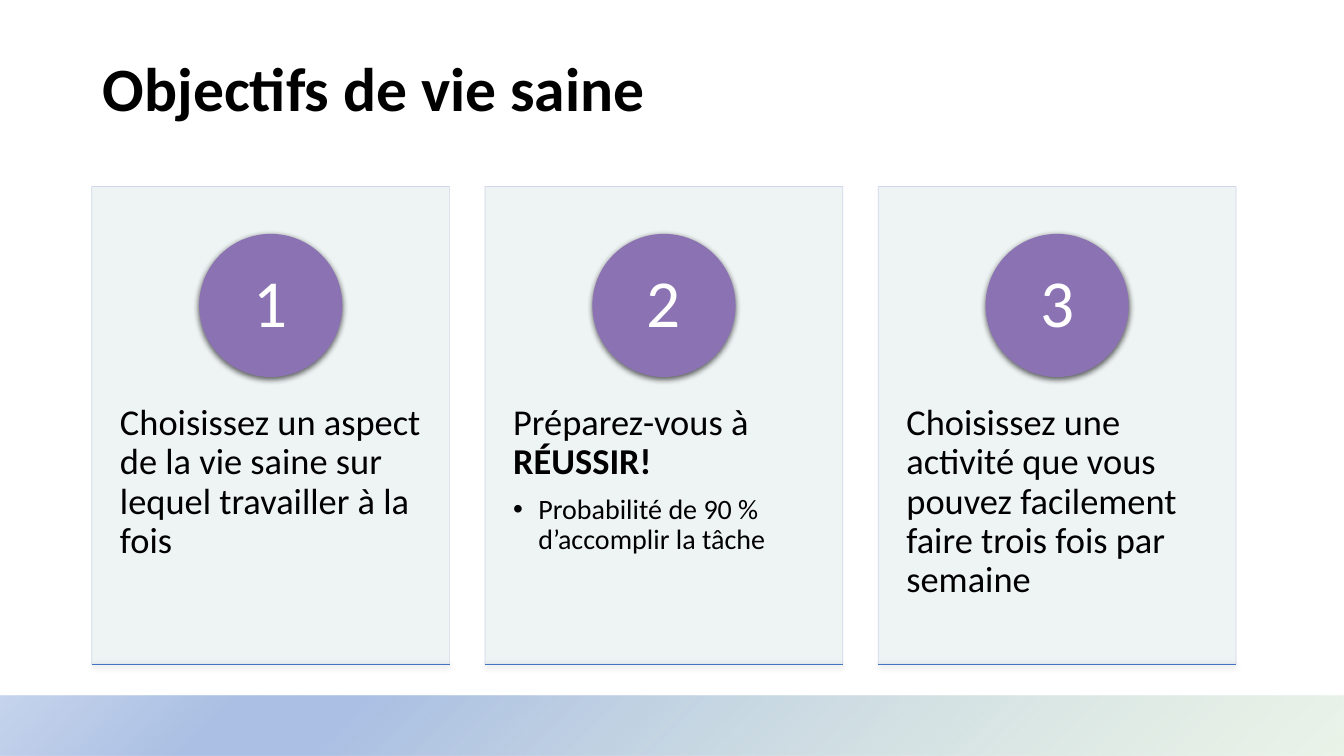
from dataclasses import dataclass

from lxml import etree
from pptx import Presentation
from pptx import util as u
from pptx.dml import color
from pptx.enum import shapes, text
from pptx.oxml import ns, parse_xml


@dataclass(frozen=True)
class Theme:
    font: str = "Calibri"
    ink: str = "000000"
    white: str = "FFFFFF"
    card: str = "EDF2F2"
    border: str = "CFD5EA"
    circle: str = "8B73B3"
    rule: str = "4472C4"
    band: tuple = ((0, "D6E8D1", 47), (74, "ABC0E4", 100), (83, "ABC0E4", 100), (100, "C7D5ED", 100))
    title_size: int = 44
    number_size: int = 48
    body_size: int = 26
    bullet_size: int = 20


theme = Theme()


def add_run(para, words, size, ink, bold=False):
    span = para.add_run()
    span.text = words
    span.font.name = theme.font
    span.font.size = u.Pt(size)
    span.font.bold = bold
    span.font.color.rgb = color.RGBColor.from_string(ink)
    para.line_spacing = 0.9


def add_shadow(shape):
    shape._element.spPr.append(parse_xml(
        f'<a:effectLst {ns.nsdecls("a")}>'
        '<a:outerShdw blurRad="57150" dist="19050" dir="5400000" algn="ctr" rotWithShape="0">'
        '<a:srgbClr val="000000"><a:alpha val="63000"/></a:srgbClr>'
        '</a:outerShdw></a:effectLst>'))


deck = Presentation()
deck.slide_width = u.Inches(13.33)
deck.slide_height = u.Inches(7.5)
page = deck.slides.add_slide(deck.slide_layouts[5])

band = page.shapes.add_shape(shapes.MSO_SHAPE.RECTANGLE, 0, u.Inches(6.9), deck.slide_width, u.Inches(0.6))
band.line.fill.background()
stops = "".join(
    f'<a:gs pos="{place * 1000}"><a:srgbClr val="{tone}"><a:alpha val="{alpha * 1000}"/></a:srgbClr></a:gs>'
    for place, tone, alpha in theme.band)
band._element.spPr.find(ns.qn("a:prstGeom")).addnext(parse_xml(
    f'<a:gradFill {ns.nsdecls("a")} rotWithShape="1"><a:gsLst>{stops}</a:gsLst>'
    '<a:path path="circle"><a:fillToRect l="100000" t="100000"/></a:path></a:gradFill>'))
band.shadow.inherit = False

title = page.shapes.title
title.left, title.top, title.width, title.height = map(u.Inches, (0.92, 0.44, 11.5, 0.94))
title.text_frame.vertical_anchor = text.MSO_ANCHOR.MIDDLE
para = title.text_frame.paragraphs[0]
para.alignment = text.PP_ALIGN.LEFT
add_run(para, "Objectifs de vie saine", theme.title_size, theme.ink, True)

goals = [
    ([("Choisissez un aspect de la vie saine sur lequel travailler à la fois", False)], None),
    ([("Préparez-vous à ", False), ("RÉUSSIR!", True)], "Probabilité de 90 % d’accomplir la tâche"),
    ([("Choisissez une activité que vous pouvez facilement faire trois fois par semaine", False)], None),
]
first_left, step, card_width = 0.91, 3.9, 3.55
card_top, card_height, diameter = 1.85, 4.74, 1.42

for index, (spans, bullet) in enumerate(goals):
    left = first_left + index * step
    bottom = card_top + card_height

    card = page.shapes.add_shape(shapes.MSO_SHAPE.RECTANGLE, u.Inches(left), u.Inches(card_top),
                                 u.Inches(card_width), u.Inches(card_height))
    card.fill.solid()
    card.fill.fore_color.rgb = color.RGBColor.from_string(theme.card)
    card.line.color.rgb = color.RGBColor.from_string(theme.border)
    card.line.width = u.Pt(0.5)
    card.shadow.inherit = False
    for tone in card._element.spPr.iter(ns.qn("a:srgbClr")):
        etree.SubElement(tone, ns.qn("a:alpha"), val="90000")

    box = page.shapes.add_textbox(u.Inches(left), u.Inches(3.65), u.Inches(card_width), u.Inches(2.84))
    frame = box.text_frame
    frame.word_wrap = True
    frame.margin_left = frame.margin_right = u.Inches(0.28)
    frame.margin_top = frame.margin_bottom = u.Inches(0.36)
    para = frame.paragraphs[0]
    para.space_after = u.Pt(9)
    for words, bold in spans:
        add_run(para, words, theme.body_size, theme.ink, bold)
    if bullet:
        para = frame.add_paragraph()
        para.level = 1
        props = para._p.get_or_add_pPr()
        props.set("marL", str(u.Inches(0.25)))
        props.set("indent", str(u.Inches(-0.25)))
        etree.SubElement(props, ns.qn("a:buFont"), typeface="Arial")
        etree.SubElement(props, ns.qn("a:buChar"), char="•")
        add_run(para, bullet, theme.bullet_size, theme.ink)

    circle = page.shapes.add_shape(shapes.MSO_SHAPE.OVAL, u.Inches(left + (card_width - diameter) / 2),
                                   u.Inches(2.32), u.Inches(diameter), u.Inches(diameter))
    circle.fill.solid()
    circle.fill.fore_color.rgb = color.RGBColor.from_string(theme.circle)
    circle.line.fill.background()
    add_shadow(circle)
    circle.text_frame.vertical_anchor = text.MSO_ANCHOR.MIDDLE
    circle.text_frame.margin_top = circle.text_frame.margin_bottom = u.Inches(0.01)
    para = circle.text_frame.paragraphs[0]
    para.alignment = text.PP_ALIGN.CENTER
    add_run(para, str(index + 1), theme.number_size, theme.white)

    rule = page.shapes.add_connector(shapes.MSO_CONNECTOR.STRAIGHT, u.Inches(left), u.Inches(bottom),
                                     u.Inches(left + card_width), u.Inches(bottom))
    rule.line.color.rgb = color.RGBColor.from_string(theme.rule)
    rule.line.width = u.Pt(0.5)
    add_shadow(rule)

deck.save("out.pptx")
